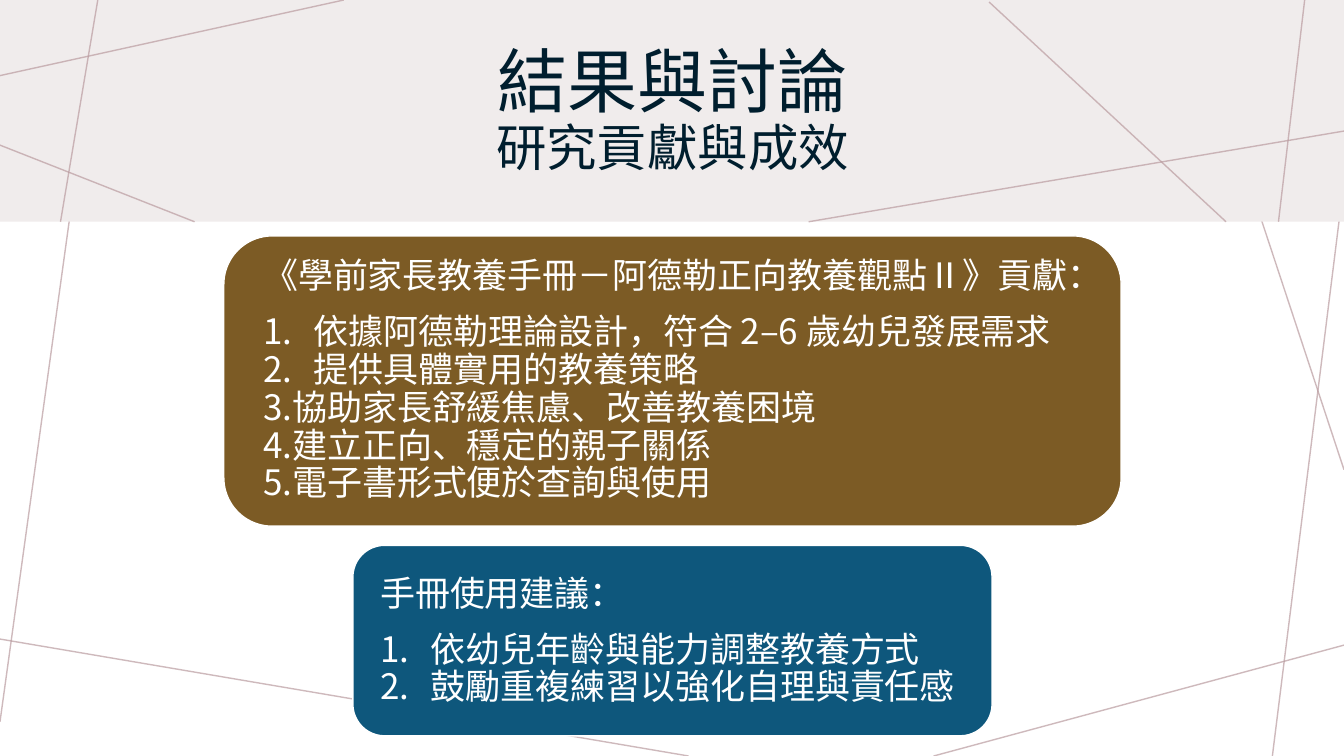
"""Builds the slide on research contributions and handbook advice."""
from lxml.etree import SubElement
from pptx import Presentation
from pptx.dml.color import RGBColor
from pptx.enum.shapes import MSO_CONNECTOR, MSO_SHAPE
from pptx.enum.text import MSO_ANCHOR, PP_ALIGN
from pptx.oxml.ns import qn
from pptx.util import Inches, Pt

COLORS = {
    "band": "F0ECEC",
    "line": "BA9CA0",
    "title": "001E2E",
    "brown": "7C5B25",
    "blue": "0E577C",
    "white": "FFFFFF",
}
FONT = "Noto Sans CJK SC"
BODY_SIZE = 25

PAGE_LINES = [
    (3.41, 0, 0, 0.75),
    (0.99, 0, 0, 7.16),
    (6.83, 7.5, 0, 6.34),
    (13.33, 6.4, 9.26, 7.5),
    (13.33, 1.8, 12.62, 7.5),
    (13.33, 4.66, 11.79, 0),
    (13.33, 1.01, 7.14, 0),
]
BAND_LINES = [
    (3.41, 0, 0, 0.75),
    (0.97, 0, 0.6, 2.2),
    (1.93, 2.2, 0, 1.44),
    (13.33, 1.3, 8.02, 2.2),
    (12.16, 2.2, 9.81, 0.02),
    (12.94, 0, 12.68, 2.2),
]


def color(name):
    return RGBColor.from_string(COLORS[name])


def write(paragraph, text, size=BODY_SIZE, ink="white", align=PP_ALIGN.LEFT,
          after=0, numbered=False):
    paragraph.alignment = align
    paragraph.line_spacing = 0.9
    paragraph.space_after = Pt(after)
    if numbered:
        properties = paragraph._p.get_or_add_pPr()
        properties.set("marL", str(Inches(0.5)))
        properties.set("indent", str(-Inches(0.5)))
        SubElement(properties, qn("a:buFont"), typeface=FONT)
        SubElement(properties, qn("a:buAutoNum"), type="arabicPeriod")
    span = paragraph.add_run()
    span.text = text
    span.font.size = Pt(size)
    span.font.name = FONT
    span.font.color.rgb = color(ink)
    SubElement(span.font._element, qn("a:ea"), typeface=FONT)


class Slide:
    """Holds the current page and draws its elements in one style."""

    def __init__(self, deck):
        self.page = deck.slides.add_slide(deck.slide_layouts[6])

    def line(self, *ends):
        connector = self.page.shapes.add_connector(
            MSO_CONNECTOR.STRAIGHT, *map(Inches, ends))
        connector.line.color.rgb = color("line")
        connector.line.width = Pt(1)
        fill = connector.line._ln.find(".//" + qn("a:srgbClr"))
        SubElement(fill, qn("a:alpha"), val="70000")
        SubElement(connector._element.spPr, qn("a:effectLst"))

    def shape(self, kind, place, fill, outline=None, parent=None):
        shapes = (parent or self.page).shapes
        shape = shapes.add_shape(kind, *map(Inches, place))
        shape.shadow.inherit = False
        shape.fill.solid()
        shape.fill.fore_color.rgb = color(fill)
        if outline:
            shape.line.color.rgb = color(outline)
            shape.line.width = Pt(1)
        else:
            shape.line.fill.background()

    def text(self, place, paragraphs, inset=0.08, parent=None):
        shapes = (parent or self.page).shapes
        frame = shapes.add_textbox(*map(Inches, place)).text_frame
        frame.word_wrap = True
        frame.vertical_anchor = MSO_ANCHOR.MIDDLE
        frame.margin_left = frame.margin_right = Inches(inset)
        frame.margin_top = frame.margin_bottom = Inches(inset)
        for index, (text, style) in enumerate(paragraphs):
            paragraph = frame.add_paragraph() if index else frame.paragraphs[0]
            write(paragraph, text, **style)

    def card(self, place, fill, text_place, heading, numbered, plain=()):
        group = self.page.shapes.add_group_shape()
        self.shape(MSO_SHAPE.ROUNDED_RECTANGLE, place, fill, "white", group)
        paragraphs = [(heading, {"after": 13})]
        paragraphs += [(text, {"numbered": True}) for text in numbered]
        paragraphs += [(text, {}) for text in plain]
        self.text(text_place, paragraphs, parent=group)


def main():
    deck = Presentation()
    deck.slide_width, deck.slide_height = Inches(13.33), Inches(7.5)
    slide = Slide(deck)
    for ends in PAGE_LINES:
        slide.line(*ends)
    slide.shape(MSO_SHAPE.RECTANGLE, (0, 0, 13.33, 2.2), "band")
    title = {"ink": "title", "align": PP_ALIGN.CENTER}
    slide.text((4.74, 0.25, 3.86, 1.72), [
        ("結果與討論", {"size": 50, **title}),
        ("研究貢獻與成效", {"size": 36, **title}),
    ])
    for ends in BAND_LINES:
        slide.line(*ends)
    slide.card(
        (2.22, 2.34, 8.9, 2.88), "brown", (2.53, 2.48, 8.27, 2.6),
        "《學前家長教養手冊－阿德勒正向教養觀點Ⅱ》貢獻：",
        ["依據阿德勒理論設計，符合 2–6 歲幼兒發展需求",
         "提供具體實用的教養策略"],
        ["3.協助家長舒緩焦慮、改善教養困境",
         "4.建立正向、穩定的親子關係",
         "5.電子書形式便於查詢與使用"])
    slide.card(
        (3.5, 5.41, 6.34, 1.89), "blue", (3.69, 5.51, 5.95, 1.71),
        "手冊使用建議：",
        ["依幼兒年齡與能力調整教養方式",
         "鼓勵重複練習以強化自理與責任感"])
    deck.save("out.pptx")


if __name__ == "__main__":
    main()
